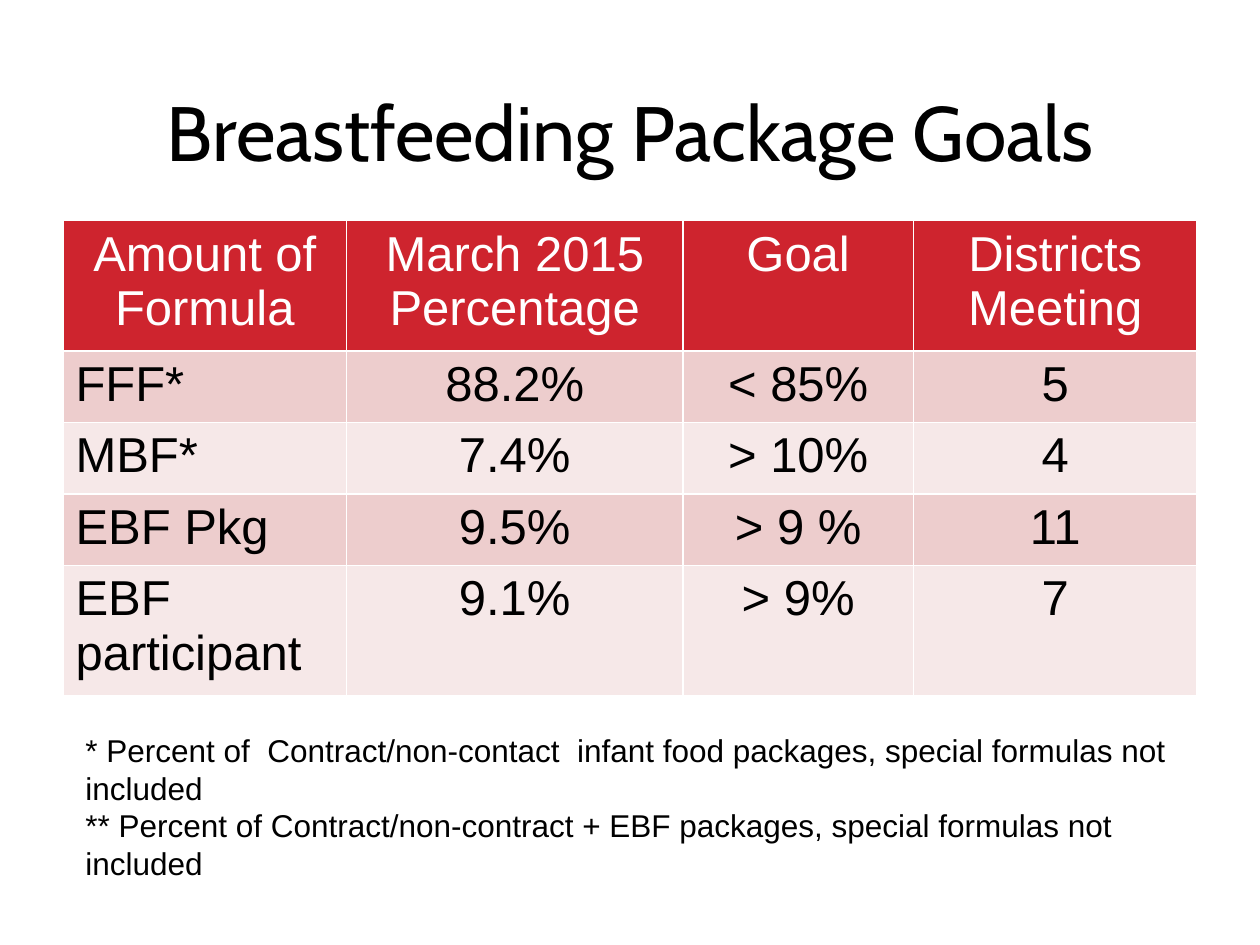
from typing import NamedTuple

from pptx import Presentation
from pptx.dml.color import RGBColor
from pptx.enum.text import MSO_ANCHOR, PP_ALIGN
from pptx.util import Inches, Pt

BLACK, WHITE = "000000", "FFFFFF"
HEADER_RED = "CE242E"
BAND_FILLS = ("EDCDCD", "F6E8E8")
COLUMN_WIDTHS = (2.25, 2.67, 1.83, 2.25)
ROW_HEIGHT = 0.41


class PackageGoal(NamedTuple):
    formula_amount: str
    percentage: str
    goal: str
    districts_meeting: str


HEADINGS = PackageGoal("Amount of Formula", "March 2015 Percentage", "Goal", "Districts Meeting")
GOALS = (
    PackageGoal("FFF*", "88.2%", "< 85%", "5"),
    PackageGoal("MBF*", "7.4%", "> 10%", "4"),
    PackageGoal("EBF Pkg", "9.5%", "> 9 %", "11"),
    PackageGoal("EBF participant", "9.1%", "> 9%", "7"),
)
FOOTNOTES = (
    "* Percent of  Contract/non-contact  infant food packages, special formulas not included",
    "** Percent of Contract/non-contract + EBF packages, special formulas not included",
)


def color(hex_code: str) -> RGBColor:
    return RGBColor.from_string(hex_code)


def write(frame, *lines: str, size: float, font: str = "Arial", fill: str = BLACK,
          align=PP_ALIGN.LEFT) -> None:
    """Fill a text frame with one uniformly formatted paragraph per line."""
    frame.word_wrap = True
    frame.text = "\n".join(lines)
    for paragraph in frame.paragraphs:
        paragraph.alignment = align
        for run in paragraph.runs:
            run.font.name = font
            run.font.size = Pt(size)
            run.font.bold = False
            run.font.color.rgb = color(fill)


def add_text_box(slide, left: float, top: float, width: float, height: float):
    box = slide.shapes.add_textbox(Inches(left), Inches(top), Inches(width), Inches(height))
    return box.text_frame


def fill_row(table, row: int, entries: PackageGoal, background: str, text_color: str) -> None:
    for column, entry in enumerate(entries):
        cell = table.cell(row, column)
        cell.fill.solid()
        cell.fill.fore_color.rgb = color(background)
        left_aligned = row > 0 and column == 0
        write(cell.text_frame, entry, size=28, fill=text_color,
              align=PP_ALIGN.LEFT if left_aligned else PP_ALIGN.CENTER)


def add_goals_table(slide) -> None:
    table = slide.shapes.add_table(
        len(GOALS) + 1, len(COLUMN_WIDTHS),
        Inches(0.5), Inches(1.75), Inches(9), Inches(3.77),
    ).table
    for column, width in zip(table.columns, COLUMN_WIDTHS):
        column.width = Inches(width)
    for row in table.rows:
        row.height = Inches(ROW_HEIGHT)
    fill_row(table, 0, HEADINGS, HEADER_RED, WHITE)
    for index, goal in enumerate(GOALS):
        fill_row(table, index + 1, goal, BAND_FILLS[index % 2], BLACK)


def main() -> None:
    presentation = Presentation()
    presentation.slide_width = Inches(10)
    presentation.slide_height = Inches(7.5)
    slide = presentation.slides.add_slide(presentation.slide_layouts[6])

    title = add_text_box(slide, 0.17, 0.5, 9.67, 1.08)
    title.vertical_anchor = MSO_ANCHOR.MIDDLE
    write(title, "Breastfeeding Package Goals", size=44, font="Cabin", align=PP_ALIGN.CENTER)

    add_goals_table(slide)
    write(add_text_box(slide, 0.58, 5.75, 8.92, 1.31), *FOOTNOTES, size=18)
    presentation.save("out.pptx")


if __name__ == "__main__":
    main()
